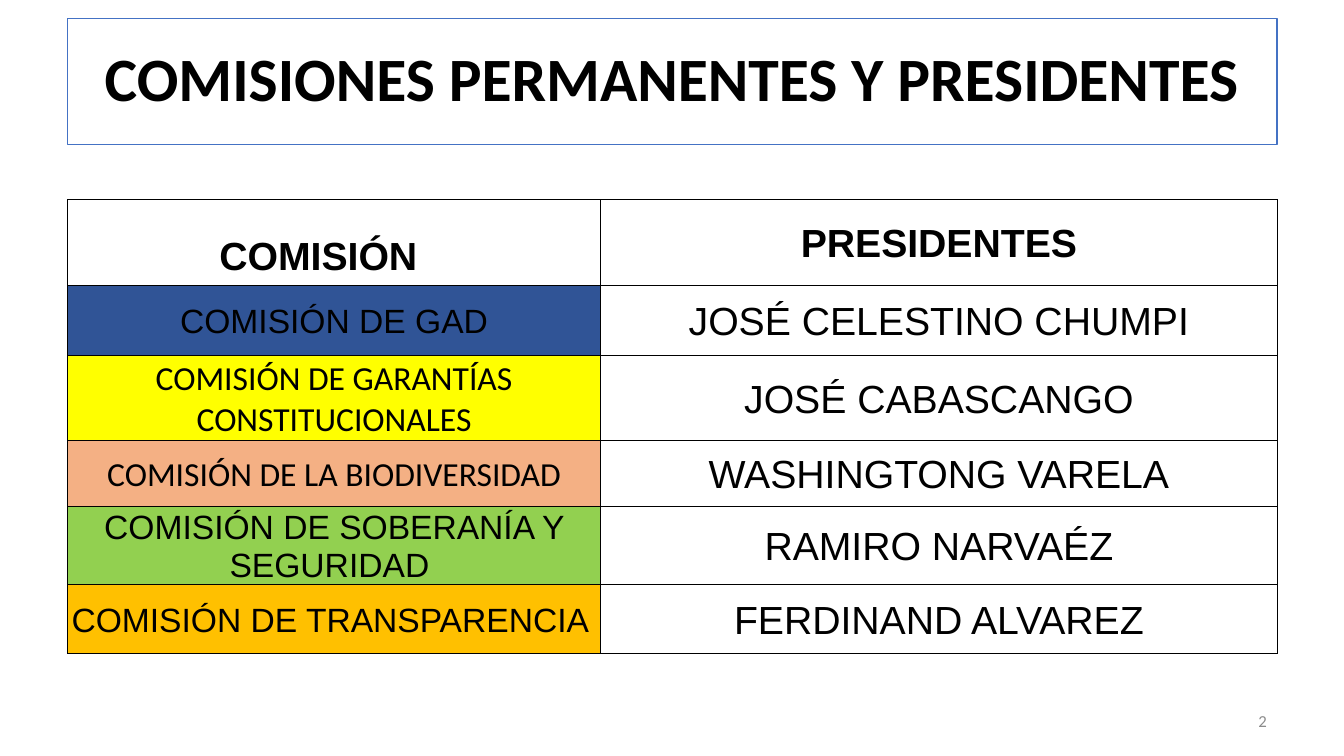
from lxml import etree
from pptx import Presentation, util as u
from pptx.dml.color import RGBColor
from pptx.enum import text as t
from pptx.oxml import ns

LEFT, WIDE = 1.7, 30.48
HEAD = ("COMISIÓN ", "PRESIDENTES")
# Commission, its font, its fill, its president
ROWS = [
    ("COMISIÓN DE GAD", "Arial", "305496", "JOSÉ CELESTINO CHUMPI"),
    ("COMISIÓN DE GARANTÍAS CONSTITUCIONALES", "Calibri", "FFFF00",
     "JOSÉ CABASCANGO"),
    ("COMISIÓN DE LA BIODIVERSIDAD", "Calibri", "F4B084",
     "WASHINGTONG VARELA"),
    ("COMISIÓN DE SOBERANÍA Y SEGURIDAD ", "Arial", "92D050",
     "RAMIRO NARVAÉZ"),
    ("COMISIÓN DE TRANSPARENCIA ", "Arial", "FFC000", "FERDINAND ALVAREZ"),
]


def paint(item, hue):
    """Give a fill or line format a solid colour."""
    item.solid()
    item.fore_color.rgb = RGBColor.from_string(hue)


def write(frame, words, size=28, font="Arial", hue="000000", bold=False,
          align=t.PP_ALIGN.CENTER):
    """Add a formatted run to the first paragraph of a text frame."""
    para = frame.paragraphs[0]
    para.alignment = align
    run = para.add_run()
    run.text = words
    run.font.size = u.Pt(size)
    run.font.name = font
    run.font.bold = bold
    paint(run.font.fill, hue)
    return para


def place(shape, x, y, w, h):
    shape.left, shape.top = u.Cm(x), u.Cm(y)
    shape.width, shape.height = u.Cm(w), u.Cm(h)


def edge(cell, hue="000000", width=0.5):
    """Draw the four borders of a cell."""
    props = cell._tc.get_or_add_tcPr()
    for spot, side in enumerate(("lnL", "lnR", "lnT", "lnB")):
        line = etree.Element(ns.qn("a:" + side), w=str(u.Pt(width)))
        fill = etree.SubElement(line, ns.qn("a:solidFill"))
        etree.SubElement(fill, ns.qn("a:srgbClr"), val=hue)
        props.insert(spot, line)


def style(cell, hue="FFFFFF"):
    cell.vertical_anchor = t.MSO_ANCHOR.MIDDLE
    cell.margin_left = cell.margin_right = cell.margin_top = u.Cm(0.08)
    cell.margin_bottom = 0
    paint(cell.fill, hue)
    edge(cell)


def banner(slide, x, y, w, h):
    """Framed title."""
    title = slide.shapes.title
    place(title, x, y, w, h)
    paint(title.fill, "FFFFFF")
    paint(title.line.fill, "4472C4")
    title.line.width = u.Pt(1)
    frame = title.text_frame
    frame.word_wrap = True
    frame.auto_size = t.MSO_AUTO_SIZE.NONE
    frame.vertical_anchor = t.MSO_ANCHOR.MIDDLE
    para = write(frame, "COMISIONES PERMANENTES Y PRESIDENTES", size=44,
                 font="Calibri", bold=True)
    para.line_spacing = 0.9


def roster(slide, x, y, w, h):
    """Table of commissions and their presidents."""
    count = len(ROWS) + 1
    grid = slide.shapes.add_table(count, 2, u.Cm(x), u.Cm(y),
                                  u.Cm(w), u.Cm(h)).table
    grid.columns[0].width = u.Cm(13.44)
    grid.columns[1].width = u.Cm(w - 13.44)
    for row in grid.rows:
        row.height = u.Cm(1.75)
    grid.rows[3].height = u.Cm(1.65)

    # Header row
    for col, words in enumerate(HEAD):
        cell = grid.cell(0, col)
        style(cell)
        write(cell.text_frame, words, bold=True)
    write(grid.cell(0, 0).text_frame, " ", size=53, bold=True)

    # One row per commission
    for num, (group, font, hue, chair) in enumerate(ROWS, 1):
        left, right = grid.cell(num, 0), grid.cell(num, 1)
        style(left, hue)
        style(right)
        write(left.text_frame, group, size=24, font=font)
        write(right.text_frame, chair)


def folio(slide, x, y, w, h):
    """Page number."""
    box = slide.shapes.add_textbox(u.Cm(x), u.Cm(y), u.Cm(w), u.Cm(h))
    frame = box.text_frame
    frame.word_wrap = True
    frame.vertical_anchor = t.MSO_ANCHOR.MIDDLE
    para = write(frame, "2", size=12, font="Calibri", hue="8C8C8C",
                 align=t.PP_ALIGN.RIGHT)
    para.space_after = u.Pt(6)


def main():
    deck = Presentation()
    deck.slide_width, deck.slide_height = u.Cm(33.87), u.Cm(19.05)
    slide = deck.slides.add_slide(deck.slide_layouts[5])
    banner(slide, LEFT, 0.46, WIDE, 3.18)
    roster(slide, LEFT, 5.03, WIDE, 10.4)
    folio(slide, LEFT + WIDE - 7.9, 17.65, 7.9, 1.02)
    deck.save("out.pptx")


if __name__ == "__main__":
    main()
